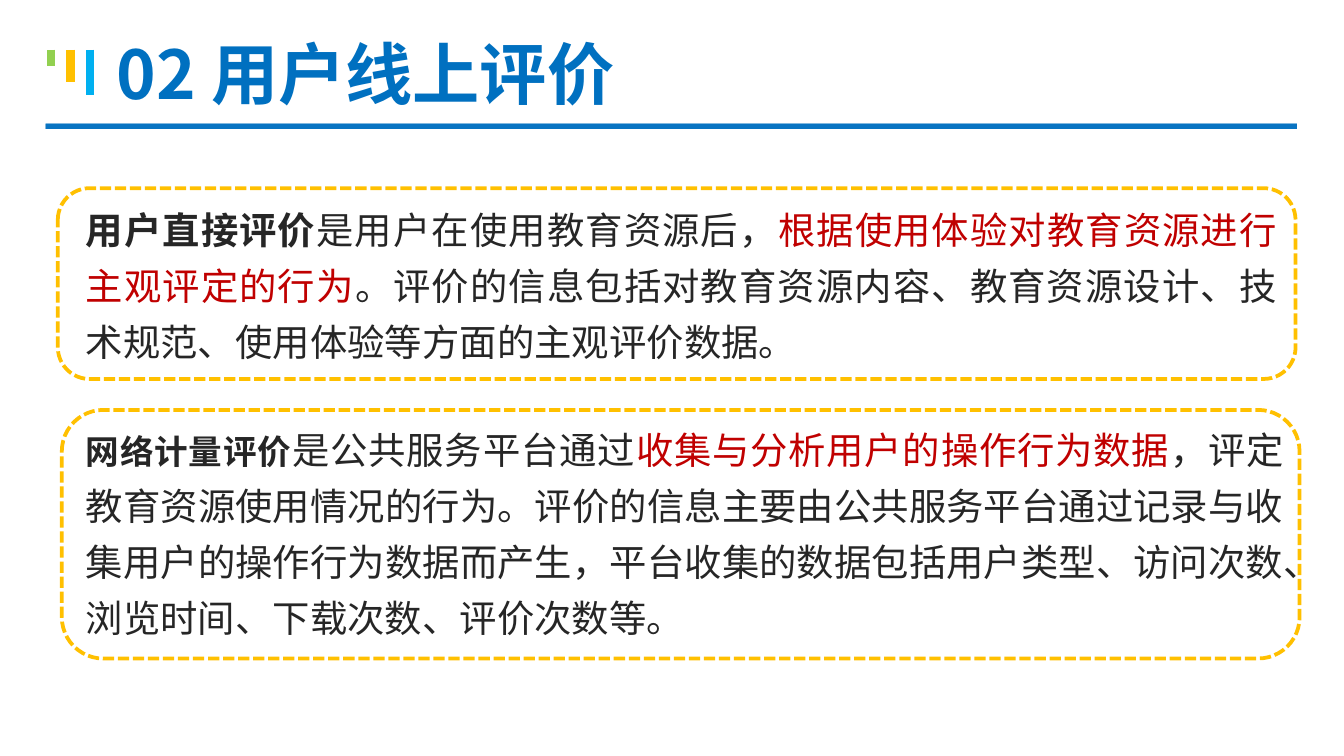
from dataclasses import dataclass

from pptx import Presentation
from pptx.dml.color import RGBColor as RGB
from pptx.enum.dml import MSO_LINE as Dash
from pptx.enum.shapes import MSO_CONNECTOR as Conn, MSO_SHAPE as Shape
from pptx.enum.text import MSO_ANCHOR as Anchor, MSO_AUTO_SIZE as Fit, PP_ALIGN as Align
from pptx.oxml.ns import qn
from pptx.util import Inches, Pt
from lxml.etree import SubElement as Sub


@dataclass(frozen=True)
class Theme:
    font: str = "Noto Sans CJK SC"
    blue: str = "0070C0"
    sky: str = "00B0F0"
    gold: str = "FFC000"
    green: str = "92D050"
    ink: str = "262626"
    red: str = "C00000"
    title: int = 36
    body: int = 20
    small: int = 18
    pitch: int = 30


T = Theme()


def add_run(para, text, size, color, bold=False):
    run = para.add_run()
    run.text = text
    form = {"name": T.font, "size": Pt(size), "bold": bold}
    for key, value in form.items():
        setattr(run.font, key, value)
    run.font.color.rgb = RGB.from_string(color)
    Sub(run.font._element, qn("a:ea"), typeface=T.font)


def add_box(slide, kind, box, fill=None):
    shape = slide.shapes.add_shape(kind, *map(Inches, box))
    shape.shadow.inherit = False
    shape.line.fill.background()
    if fill:
        shape.fill.solid()
        shape.fill.fore_color.rgb = RGB.from_string(fill)
    else:
        shape.fill.background()
    return shape


def add_rule(slide, box):
    # Two translucent layers give the rule its depth
    for _ in range(2):
        bar = add_box(slide, Shape.RECTANGLE, box, T.blue)
        tint = bar.fill._xPr.find(qn("a:solidFill"))[0]
        Sub(tint, qn("a:alpha"), val="81000")


def add_mark(slide, box):
    # Three hanging bars, each longer than the one before
    left, top, width, height = box
    bars = [(T.green, 0.12), (T.gold, 0.24), (T.sky, height)]
    for i, (color, size) in enumerate(bars):
        x = Inches(left + i * width / 2)
        bar = slide.shapes.add_connector(
            Conn.STRAIGHT, x, Inches(top), x, Inches(top + size))
        bar.line.color.rgb = RGB.from_string(color)
        bar.line.width = Pt(4.5)
        Sub(bar._element.spPr, qn("a:effectLst"))


def add_head(slide, box, name):
    left, top, width, height = box
    add_rule(slide, (left, top + 0.88, 9.31, 0.04))
    add_mark(slide, (left + 0.04, top + 0.33, 0.29, 0.34))
    frame = add_box(slide, Shape.ROUNDED_RECTANGLE,
                    (left + 0.38, top, width - 0.38, height)).text_frame
    frame.vertical_anchor = Anchor.MIDDLE
    para = frame.paragraphs[0]
    para.alignment = Align.LEFT
    add_run(para, name, T.title, T.blue, True)


def add_panel(slide, box, inset, size, parts):
    # Definition text inside a dashed frame
    left, top, width, height = box
    dx, dy = inset
    text = slide.shapes.add_textbox(
        *map(Inches, (left + dx, top + dy, *size)))
    form = {"word_wrap": True, "auto_size": Fit.SHAPE_TO_FIT_TEXT}
    for key, value in form.items():
        setattr(text.text_frame, key, value)
    para = text.text_frame.paragraphs[0]
    para.alignment = Align.JUSTIFY
    para.line_spacing = Pt(T.pitch)
    for part in parts:
        add_run(para, *part)

    edge = add_box(slide, Shape.ROUNDED_RECTANGLE, box).line
    edge.color.rgb = RGB.from_string(T.gold)
    edge.width = Pt(2)
    edge.dash_style = Dash.SQUARE_DOT


def main():
    deck = Presentation()
    deck.slide_width = Inches(10)
    deck.slide_height = deck.slide_width * 9 // 16
    slide = deck.slides.add_slide(deck.slide_layouts[6])

    add_head(slide, (0.34, 0.04, 9.66, 1), "02 用户线上评价")

    # Direct rating by users
    add_panel(slide, (0.43, 1.4, 9.21, 1.42), (0.11, 0.01), (9.06, 1.17), [
        ("用户直接评价", T.body, T.ink, True),
        ("是用户在使用教育资源后，", T.body, T.ink),
        ("根据使用体验对教育资源进行主观评定的行为", T.body, T.red),
        ("。评价的信息包括对教育资源内容、教育资源设计、技术规范、"
         "使用体验等方面的主观评价数据。", T.body, T.ink),
    ])

    # Rating from usage data
    add_panel(slide, (0.46, 3.05, 9.21, 1.85), (0.08, 0), (9.11, 1.44), [
        ("网络计量评价", T.small, T.ink, True),
        ("是公共服务平台通过", T.body, T.ink),
        ("收集与分析用户的操作行为数据", T.body, T.red),
        ("，评定教育资源使用情况的行为。评价的信息主要由公共服务平台通过"
         "记录与收集用户的操作行为数据而产生，平台收集的数据包括用户类型、"
         "访问次数、浏览时间、下载次数、评价次数等。", T.body, T.ink),
    ])

    deck.save("out.pptx")


if __name__ == "__main__":
    main()
